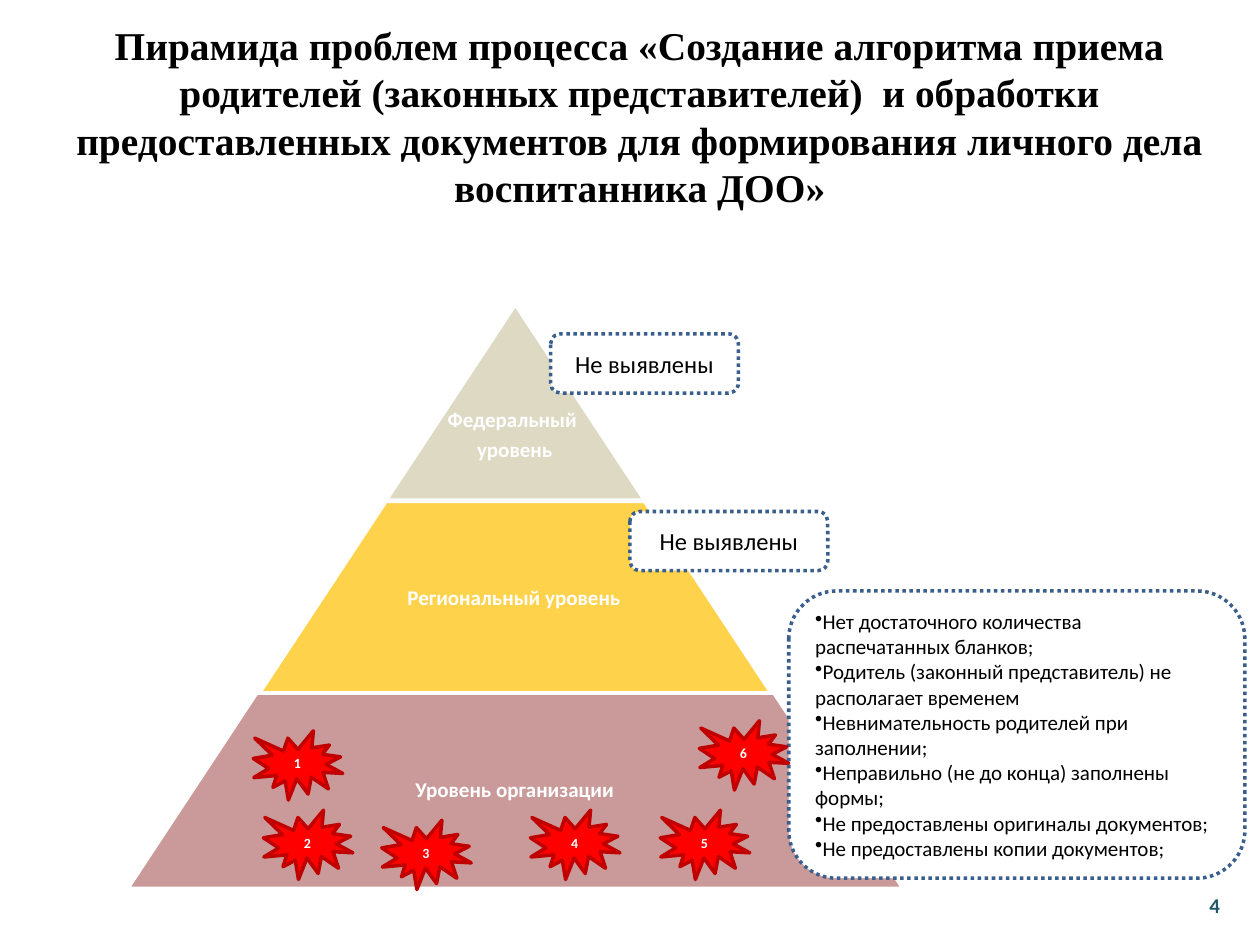
import pptx
import pptx.util
import pptx.dml.color
import pptx.enum.dml
import pptx.enum.shapes
import pptx.enum.text
import pptx.oxml.ns
from dataclasses import dataclass
from lxml import etree

Inches = pptx.util.Inches
Pt = pptx.util.Pt
RGB = pptx.dml.color.RGBColor.from_string
SHAPE = pptx.enum.shapes.MSO_SHAPE
ALIGN = pptx.enum.text.PP_ALIGN
MIDDLE = pptx.enum.text.MSO_ANCHOR.MIDDLE
DOTTED = pptx.enum.dml.MSO_LINE.ROUND_DOT


@dataclass(frozen=True)
class Theme:
    title_font: str = "Times New Roman"
    body_font: str = "Calibri"
    black: str = "000000"
    white: str = "FFFFFF"
    page: str = "215968"
    federal: str = "DDD9C3"
    regional: str = "FFC000"
    local: str = "953735"
    callout_line: str = "3A5F8C"
    seal: str = "FF0000"
    seal_line: str = "C00000"
    title_size: float = 22.5
    callout_size: float = 14
    body_size: float = 12
    seal_size: float = 8
    line_width: float = 2


class SlideBuilder:
    def __init__(self, slide, theme):
        self.s = slide
        self.theme = theme

    def set_text(self, tf, lines, size, color, font=None, bold=False,
                 align=ALIGN.CENTER, bullet=None, inset=None, spaced=False):
        """Fill a text frame, one paragraph for each line."""
        tf.word_wrap = True
        tf.vertical_anchor = MIDDLE
        if inset is not None:
            tf.margin_left = tf.margin_right = Inches(inset)
            tf.margin_top = tf.margin_bottom = Inches(inset)
        for i, line in enumerate(lines):
            p = tf.add_paragraph() if i else tf.paragraphs[0]
            p.alignment = align
            if spaced:
                p.line_spacing = 0.9
                p.space_after = Pt(0.35 * size)
            if bullet:
                pPr = p._p.get_or_add_pPr()
                etree.SubElement(pPr, pptx.oxml.ns.qn("a:buChar"), char=bullet)
            r = p.add_run()
            r.text = line
            r.font.size = Pt(size)
            r.font.name = font or self.theme.body_font
            r.font.bold = bold
            r.font.color.rgb = RGB(color)

    def text(self, box, lines, size, color, **style):
        sp = self.s.shapes.add_textbox(*map(Inches, box))
        self.set_text(sp.text_frame, lines, size, color, **style)

    def shape(self, kind, box, fill, line, alpha=100):
        """Add a preset shape; alpha is its opacity in percent."""
        sp = self.s.shapes.add_shape(kind, *map(Inches, box))
        sp.shadow.inherit = False
        sp.fill.solid()
        sp.fill.fore_color.rgb = RGB(fill)
        if alpha < 100:
            color = sp._element.spPr.find(".//" + pptx.oxml.ns.qn("a:srgbClr"))
            etree.SubElement(color, pptx.oxml.ns.qn("a:alpha"), val=str(alpha * 1000))
        sp.line.color.rgb = RGB(line)
        sp.line.width = Pt(self.theme.line_width)
        return sp

    def level(self, box, fill, alpha, label_box, lines):
        """Add one tier of the pyramid with its label."""
        t = self.theme
        sp = self.shape(SHAPE.TRAPEZOID, box, fill, t.white, alpha)
        sp.adjustments[0] = 0.66
        self.text(label_box, lines, t.body_size, t.white, bold=True,
                  inset=0.02, spaced=True)

    def callout(self, box, lines, size, **style):
        t = self.theme
        sp = self.shape(SHAPE.ROUNDED_RECTANGLE, box, t.white, t.callout_line)
        sp.line.dash_style = DOTTED
        self.set_text(sp.text_frame, lines, size, t.black, **style)

    def seal(self, number, left, top):
        t = self.theme
        sp = self.shape(SHAPE.EXPLOSION1, (left, top, 0.71, 0.55), t.seal, t.seal_line)
        self.set_text(sp.text_frame, [str(number)], t.seal_size, t.white, bold=True)


TITLE = ("Пирамида проблем процесса «Создание алгоритма приема родителей "
         "(законных представителей)  и обработки предоставленных документов "
         "для формирования личного дела воспитанника ДОО»")
PROBLEMS = [
    "Нет достаточного количества распечатанных бланков;",
    "Родитель (законный представитель) не располагает временем",
    "Невнимательность родителей при заполнении;",
    "Неправильно (не до конца) заполнены формы;",
    "Не предоставлены оригиналы документов;",
    "Не предоставлены копии документов;",
]
SEALS = {5: (5.24, 6.43), 4: (4.21, 6.43), 3: (3.03, 6.51),
         1: (2.01, 5.8), 2: (2.09, 6.43), 6: (5.55, 5.72)}


def main():
    prs = pptx.Presentation()
    prs.slide_width, prs.slide_height = Inches(10), Inches(7.5)
    t = Theme()
    b = SlideBuilder(prs.slides.add_slide(prs.slide_layouts[6]), t)

    b.text((0.33, 0.29, 9.5, 1.26), [TITLE], t.title_size, t.black,
           font=t.title_font, bold=True)
    b.text((9.45, 7.03, 0.38, 0.31), ["4"], t.body_size, t.page, bold=True)

    center, step, height = 4.09, 2.05, 1.55
    levels = [
        (2.42, t.federal, 100, (3.06, 2.94, step, 1.03), ["Федеральный ", "уровень"]),
        (3.98, t.regional, 70, (2.75, 3.98, 2.66, height), ["Региональный уровень"]),
        (5.5, t.local, 50, (2.09, 5.5, 3.99, height), ["Уровень организации"]),
    ]
    for i, (top, fill, alpha, label_box, lines) in enumerate(levels, 1):
        box = (center - i * step / 2, top, i * step, height)
        b.level(box, fill, alpha, label_box, lines)

    for box in ((4.37, 2.65, 1.49, 0.47), (5, 4.06, 1.57, 0.47)):
        b.callout(box, ["Не выявлены"], t.callout_size)
    b.callout((6.26, 4.69, 3.62, 2.28), PROBLEMS, t.body_size,
              align=ALIGN.LEFT, bullet="•")

    for number, (left, top) in SEALS.items():
        b.seal(number, left, top)

    prs.save("out.pptx")


if __name__ == "__main__":
    main()
